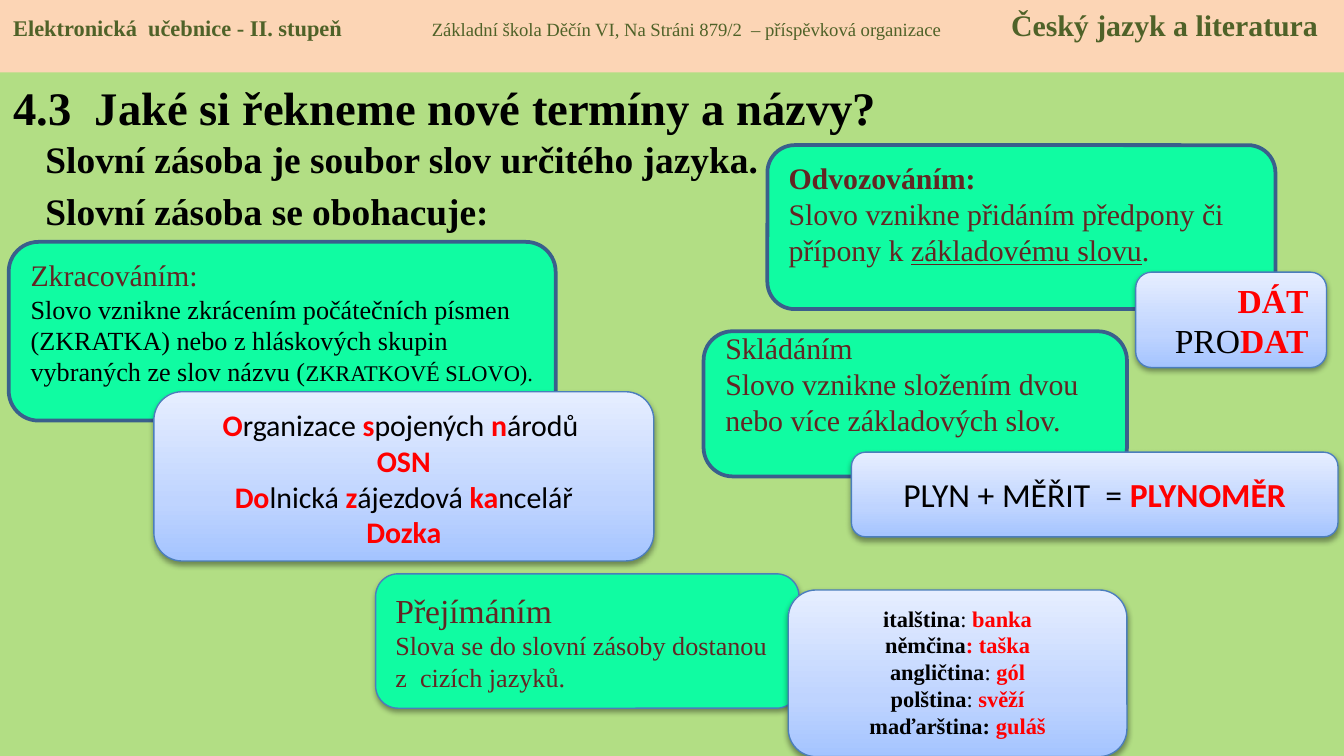
import pptx
import pptx.dml.color
import pptx.enum.shapes
import pptx.enum.text
import pptx.util
from lxml import etree
from pptx.oxml.ns import nsdecls, qn

COLUMNS = 100
CELL = pptx.util.Inches(10) // COLUMNS
SERIF, SANS = "Times New Roman", "Calibri"
BLACK, RED, BROWN, OLIVE = "000000", "FF0000", "632523", "4F6228"
MINT, BLUE, LIGHT_BLUE = "10FCA2", "3A5F8C", "4B7EBC"
GRADIENT_STOPS = [(0, "A4C4FF"), (35, "BFD4FF"), (100, "E6EEFF")]
LEFT = pptx.enum.text.PP_ALIGN.LEFT
CENTER = pptx.enum.text.PP_ALIGN.CENTER
RIGHT = pptx.enum.text.PP_ALIGN.RIGHT
TOP = pptx.enum.text.MSO_ANCHOR.TOP
MIDDLE = pptx.enum.text.MSO_ANCHOR.MIDDLE
RECTANGLE = pptx.enum.shapes.MSO_SHAPE.RECTANGLE
ROUNDED = pptx.enum.shapes.MSO_SHAPE.ROUNDED_RECTANGLE


def color(value):
    return pptx.dml.color.RGBColor.from_string(value)


def cells(box):
    """Turn grid cells into slide lengths."""
    return [round(length * CELL) for length in box]


def within(region, box):
    """Shift a box by the top left corner of its region."""
    return (region[0] + box[0], region[1] + box[1], *box[2:])


def write(shape, paragraphs, font=SERIF, align=LEFT, anchor=TOP, space=0):
    """Fill a shape with paragraphs of (text, size, colour, bold, underline) runs."""
    frame = shape.text_frame
    frame.word_wrap = True
    frame.vertical_anchor = anchor
    for index, runs in enumerate(paragraphs):
        paragraph = frame.paragraphs[0] if index == 0 else frame.add_paragraph()
        paragraph.alignment = align
        paragraph.space_before = pptx.util.Pt(space if index else 0)
        for text, size, ink, bold, *underline in runs:
            run = paragraph.add_run()
            run.text = text
            run.font.name = font
            run.font.size = pptx.util.Pt(size)
            run.font.color.rgb = color(ink)
            run.font.bold = bold
            run.font.underline = bool(underline)


def add_panel(slide, kind, box, fill=None, line=None, line_width=0.75):
    shape = slide.shapes.add_shape(kind, *cells(box))
    shape.shadow.inherit = False
    if fill:
        shape.fill.solid()
        shape.fill.fore_color.rgb = color(fill)
    else:
        shape.fill.background()
    if line:
        shape.line.color.rgb = color(line)
        shape.line.width = pptx.util.Pt(line_width)
    else:
        shape.line.fill.background()
    return shape


def add_drop_shadow(shape):
    effects = shape._element.spPr.find(qn("a:effectLst"))
    effects.append(etree.fromstring(
        f'<a:outerShdw {nsdecls("a")} blurRad="{pptx.util.Pt(3.1)}" dist="{pptx.util.Pt(1.6)}" '
        'dir="5400000" rotWithShape="0"><a:srgbClr val="000000"><a:alpha val="38000"/>'
        '</a:srgbClr></a:outerShdw>'))


def add_gradient(shape):
    stops = "".join(f'<a:gs pos="{share * 1000}"><a:srgbClr val="{value}"/></a:gs>'
                    for share, value in GRADIENT_STOPS)
    properties = shape._element.spPr
    properties.replace(properties.find(qn("a:noFill")), etree.fromstring(
        f'<a:gradFill {nsdecls("a")} rotWithShape="1"><a:gsLst>{stops}</a:gsLst>'
        '<a:lin ang="16200000" scaled="0"/></a:gradFill>'))


def add_explanation(slide, box, paragraphs, raised=False, anchor=TOP):
    line, width = (LIGHT_BLUE, 0.75) if raised else (BLUE, 2)
    shape = add_panel(slide, ROUNDED, box, MINT, line, width)
    if raised:
        add_drop_shadow(shape)
    write(shape, paragraphs, anchor=anchor)
    return shape


def add_example(slide, box, paragraphs, font=SERIF, align=CENTER, anchor=TOP):
    shape = add_panel(slide, ROUNDED, box, line=LIGHT_BLUE)
    add_gradient(shape)
    add_drop_shadow(shape)
    write(shape, paragraphs, font, align, anchor)


def add_header(slide, box):
    shape = add_panel(slide, RECTANGLE, box, "FCD5B5")
    properties = shape.text_frame.paragraphs[0]._p.get_or_add_pPr()
    tabs = etree.SubElement(properties, qn("a:tabLst"))
    for column in (31.15, 74.25):
        etree.SubElement(tabs, qn("a:tab"), pos=str(round(column * CELL)), algn="l")
    write(shape, [[
        ("Elektronická  učebnice - II. stupeň\t", 12, OLIVE, True),
        ("Základní škola Děčín VI, Na Stráni 879/2  – příspěvková organizace\t", 10, OLIVE, False),
        ("Český jazyk a literatura", 16, OLIVE, True)]])


def add_introduction(slide, region):
    title = slide.shapes.title
    title.left, title.top, title.width, title.height = cells(within(region, (0, 0, 90, 6.5)))
    write(title, [[("4.3  Jaké si řekneme nové termíny a názvy?", 25, BLACK, True)]])
    body = slide.shapes.add_textbox(*cells(within(region, (2.4, 4.25, 95.3, 44.9))))
    lines = ["Slovní zásoba je soubor slov určitého jazyka.", "Slovní zásoba se obohacuje:"]
    write(body, [[(line, 20, BLACK, True)] for line in lines], space=4)


def add_derivation(slide, region):
    add_explanation(slide, within(region, (0, 0, 37.8, 12.2)), [
        [("Odvozováním:", 16, BROWN, True)],
        [("Slovo vznikne přidáním předpony či přípony k ", 16, BROWN, False),
         ("základovému slovu", 16, BROWN, False, True), (".", 16, BROWN, False)]])
    add_example(slide, within(region, (27.4, 9.45, 14.2, 7.1)), [
        [("DÁT", 18, RED, True)],
        [("PRO", 18, BLACK, False), ("DAT", 18, RED, True)]], align=RIGHT, anchor=MIDDLE)


def add_compounding(slide, region):
    shape = add_explanation(slide, within(region, (0, 0, 31.5, 10.8)), [
        [("Skládáním", 16, BROWN, False)],
        [("Slovo vznikne složením dvou nebo více základových slov.", 16, BROWN, False)]],
        anchor=MIDDLE)
    shape.adjustments[0] = 0.2
    shape.text_frame.margin_bottom = round(3.5 * CELL)
    add_example(slide, within(region, (11, 9, 36.2, 6.3)), [
        [("PLYN + MĚŘIT  = ", 18, BLACK, False), ("PLYNOMĚR", 18, RED, True)]],
        font=SANS, anchor=MIDDLE)


def add_abbreviation(slide, region):
    add_explanation(slide, within(region, (0, 0, 40.7, 13.3)), [
        [("Zkracováním:", 16, BROWN, False)],
        [("Slovo vznikne zkrácením počátečních písmen (ZKRATKA) nebo z hláskových skupin "
          "vybraných ze slov názvu (", 14, BLACK, False), ("ZKRATKOVÉ SLOVO).", 12, BLACK, False)]])

    def initials(*pairs):
        return [run for start, rest in pairs
                for run in ((start, 16, RED, True), (rest, 16, BLACK, False))]

    add_example(slide, within(region, (10.8, 11.15, 37.2, 12.6)), [
        initials(("O", "rganizace "), ("s", "pojených "), ("n", "árodů ")),
        [("OSN", 16, RED, True)],
        initials(("Do", "lnická"), (" z", "ájezdová"), (" ka", "ncelář")),
        [("Dozka", 16, RED, True)]], font=SANS)


def add_borrowing(slide, region):
    add_explanation(slide, within(region, (0, 0, 31.5, 10)), [
        [("Přejímáním", 18, BROWN, False)],
        [("Slova se do slovní zásoby dostanou z  cizích jazyků.", 14, BROWN, False)]],
        raised=True, anchor=MIDDLE)
    plain, red = (": ", 12, BLACK, False), (": ", 12, RED, True)
    words = [("italština", plain, "banka"), ("němčina", red, "taška"), ("angličtina", plain, "gól"),
             ("polština", plain, "svěží"), ("maďarština", (": ", 12, BLACK, True), "guláš")]
    add_example(slide, within(region, (30.7, 1.2, 25.2, 12.4)), [
        [(language, 12, BLACK, True), colon, (word, 12, RED, True)]
        for language, colon, word in words])


def main():
    presentation = pptx.Presentation()
    presentation.slide_width = COLUMNS * CELL
    presentation.slide_height = presentation.slide_width * 9 // 16
    slide = presentation.slides.add_slide(presentation.slide_layouts[5])
    slide.background.fill.solid()
    slide.background.fill.fore_color.rgb = color("B2DE84")
    add_introduction(slide, (0, 5.4))
    add_header(slide, (0, 0, COLUMNS, 5.4))
    add_derivation(slide, (57.1, 10.8))
    add_compounding(slide, (52.35, 24.65))
    add_abbreviation(slide, (0.65, 18))
    add_borrowing(slide, (27.95, 42.7))
    presentation.save("out.pptx")


if __name__ == "__main__":
    main()
